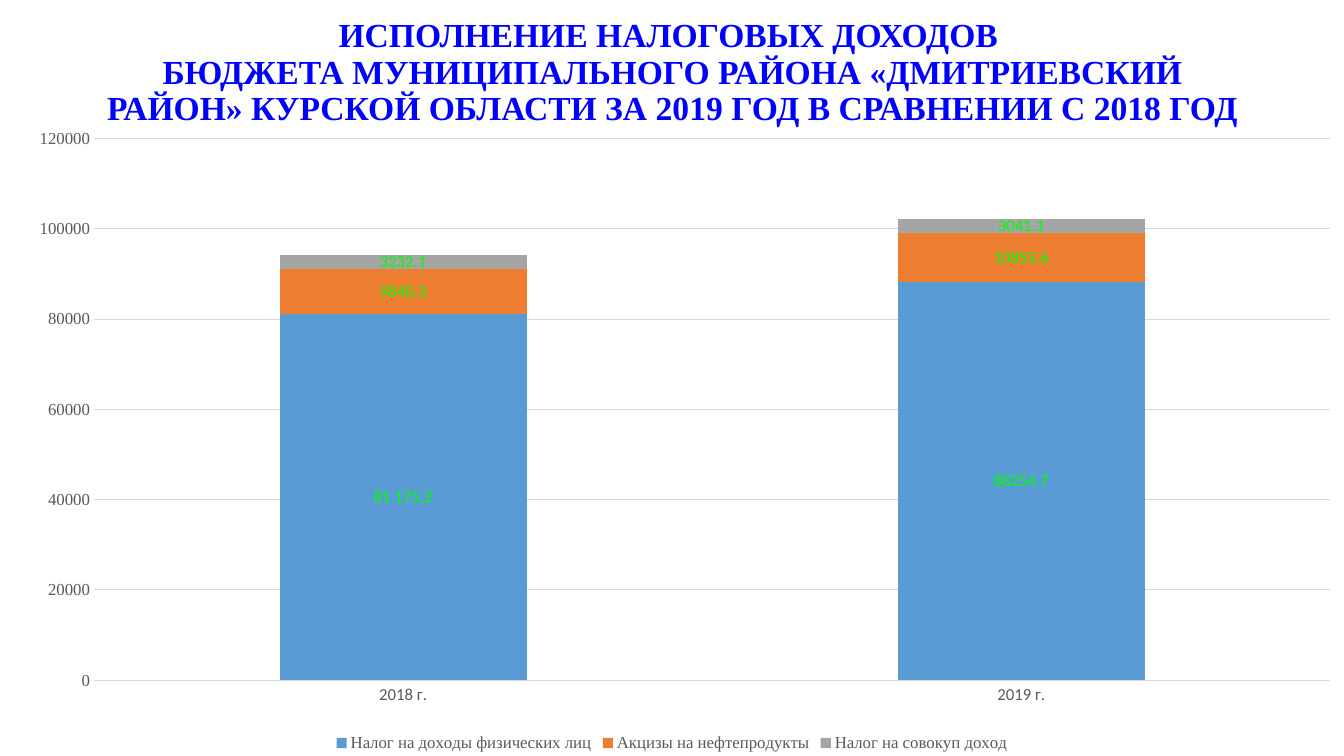
"""Builds a slide comparing district tax revenue for 2018 and 2019."""
from lxml import etree
from pptx import Presentation, util as u
from pptx.chart.data import CategoryChartData
from pptx.dml.color import RGBColor
from pptx.enum import chart as ch, text
from pptx.oxml import ns

HEADING = ("ИСПОЛНЕНИЕ НАЛОГОВЫХ ДОХОДОВ \vБЮДЖЕТА МУНИЦИПАЛЬНОГО РАЙОНА «ДМИТРИЕВСКИЙ РАЙОН» "
           "КУРСКОЙ ОБЛАСТИ ЗА 2019 ГОД В СРАВНЕНИИ С 2018 ГОД")
YEARS = ["2018 г.", "2019 г."]
TAXES = [
    ("Налог на доходы физических лиц", [81175.2, 88254.7], "5B9BD5"),
    ("Акцизы на нефтепродукты", [9840.3, 10855.6], "ED7D31"),
    ("Налог на совокуп доход", [3232.1, 3041.1], "A5A5A5"),
]
INCOME_TAX_2018 = "81 175,2"
PLOT_AREA = {"x": 0.07, "y": 0.02, "w": 0.92, "h": 0.86}
SERIF, SANS = "Times New Roman", "Calibri"
GREY, GREEN = "595959", "00FF00"


def color(value):
    return RGBColor.from_string(value)


def style(font, name, size, value, bold=False):
    font.name, font.size, font.bold = name, u.Pt(size), bold
    font.color.rgb = color(value)


def add_heading(slide):
    box = slide.shapes.add_textbox(u.Inches(0.92), 0, u.Inches(11.5), u.Inches(1.45))
    frame = box.text_frame
    frame.word_wrap = True
    frame.vertical_anchor = text.MSO_ANCHOR.MIDDLE
    line = frame.paragraphs[0]
    line.text = HEADING
    line.alignment = text.PP_ALIGN.CENTER
    line.line_spacing = 0.9
    style(line.font, SERIF, 24, "0000FF", True)


def place_plot(chart):
    area = chart._chartSpace.find(".//" + ns.qn("c:plotArea"))
    for automatic in area.findall(ns.qn("c:layout")):
        area.remove(automatic)
    layout = etree.Element(ns.qn("c:layout"))
    manual = etree.SubElement(layout, ns.qn("c:manualLayout"))
    settings = {"layoutTarget": "inner", "xMode": "edge", "yMode": "edge", **PLOT_AREA}
    for tag, value in settings.items():
        etree.SubElement(manual, ns.qn("c:" + tag)).set("val", str(value))
    area.insert(0, layout)


def add_revenue_chart(slide):
    revenue = CategoryChartData()
    revenue.categories = YEARS
    for name, amounts, _ in TAXES:
        revenue.add_series(name, amounts)
    chart = slide.shapes.add_chart(
        ch.XL_CHART_TYPE.COLUMN_STACKED, 0, u.Inches(1.25),
        u.Inches(13.33), u.Inches(6.25), revenue).chart
    chart.has_title = False
    style(chart.font, SANS, 10, "000000")
    place_plot(chart)

    chart.has_legend = True
    chart.legend.position = ch.XL_LEGEND_POSITION.BOTTOM
    chart.legend.include_in_layout = False
    style(chart.legend.font, SERIF, 12, GREY)

    for axis, face in ((chart.category_axis, SANS), (chart.value_axis, SERIF)):
        axis.major_tick_mark = axis.minor_tick_mark = ch.XL_TICK_MARK.NONE
        axis.format.line.fill.background()
        style(axis.tick_labels.font, face, 12, GREY)
    amounts_axis = chart.value_axis
    amounts_axis.minimum_scale, amounts_axis.maximum_scale = 0, 120000
    amounts_axis.major_unit = 20000
    grid = amounts_axis.major_gridlines.format.line
    grid.color.rgb, grid.width = color("D9D9D9"), u.Pt(0.75)

    columns = chart.plots[0]
    columns.gap_width, columns.overlap = 150, 100
    columns.vary_by_categories = False
    for tax, (_, _, fill) in zip(columns.series, TAXES):
        tax.format.fill.solid()
        tax.format.fill.fore_color.rgb = color(fill)
        tax.data_labels.show_value = True
        style(tax.data_labels.font, SANS, 12, GREEN)

    label = columns.series[0].points[0].data_label.text_frame
    label.text = INCOME_TAX_2018
    style(label.paragraphs[0].runs[0].font, SANS, 12, GREEN)


def main():
    deck = Presentation()
    deck.slide_width, deck.slide_height = u.Inches(13.33), u.Inches(7.5)
    slide = deck.slides.add_slide(deck.slide_layouts[6])
    add_heading(slide)
    add_revenue_chart(slide)
    deck.save("out.pptx")


if __name__ == "__main__":
    main()
